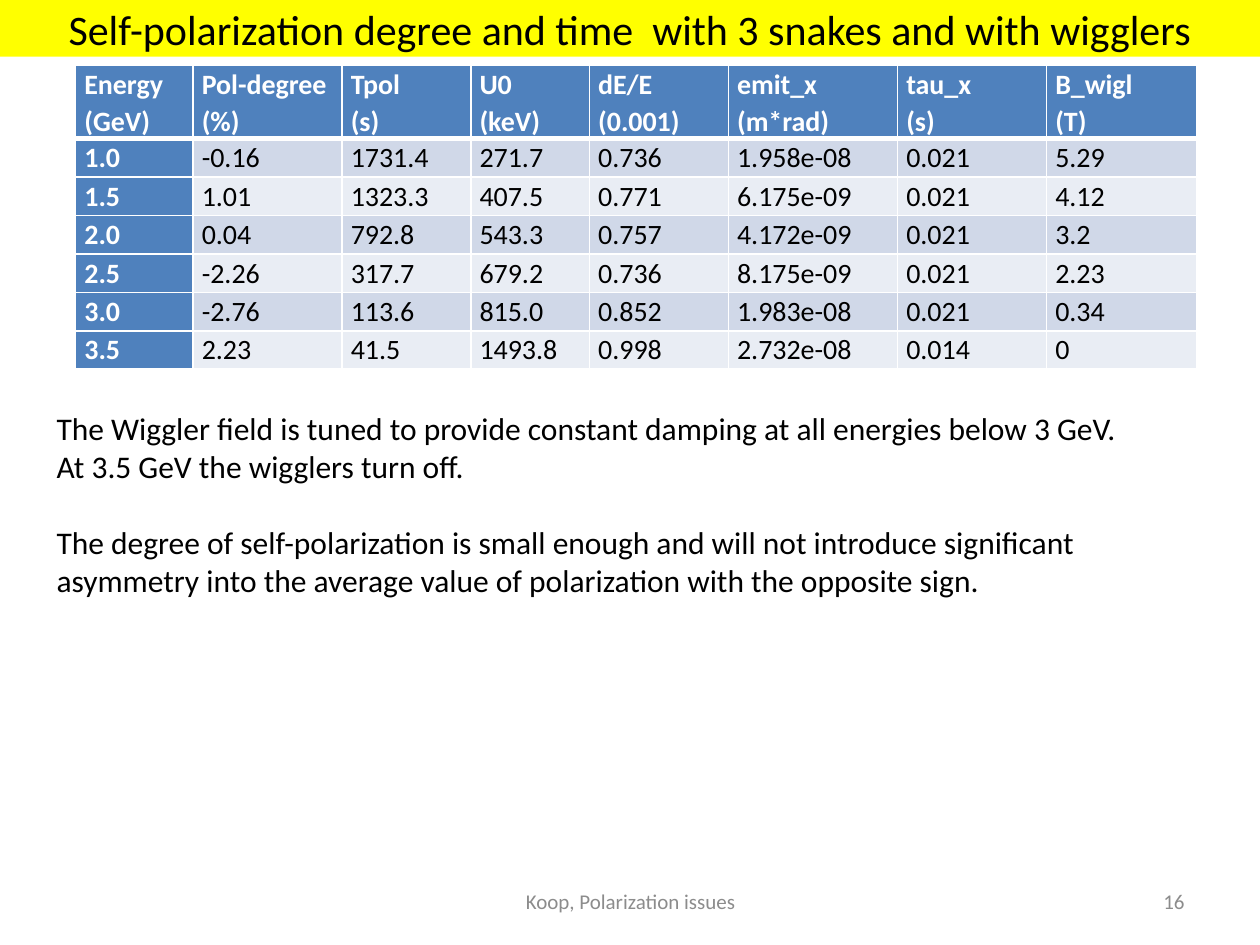
import pptx
import pptx.dml.color
import pptx.enum.text
import pptx.oxml
import pptx.oxml.ns
import pptx.util

Inches = pptx.util.Inches
Pt = pptx.util.Pt
Align = pptx.enum.text.PP_ALIGN
Anchor = pptx.enum.text.MSO_ANCHOR

FONT = "Calibri"
BLACK, WHITE, GREY, YELLOW = "000000", "FFFFFF", "8C8C8C", "FFFF00"
HEADER_BLUE, BANDS = "4F81BD", ("D0D8E8", "E9EDF4")

HEADINGS = ["Energy\n(GeV)", "Pol-degree\n(%)", "Tpol\n(s)", "U0\n(keV)",
            "dE/E\n(0.001)", "emit_x\n(m*rad)", "tau_x\n(s)", "B_wigl\n(T)"]
RESULTS = [
    ["1.0", "-0.16", "1731.4", "271.7", "0.736", "1.958e-08", "0.021", "5.29"],
    ["1.5", "1.01", "1323.3", "407.5", "0.771", "6.175e-09", "0.021", "4.12"],
    ["2.0", "0.04", "792.8", "543.3", "0.757", "4.172e-09", "0.021", "3.2"],
    ["2.5", "-2.26", "317.7", "679.2", "0.736", "8.175e-09", "0.021", "2.23"],
    ["3.0", "-2.76", "113.6", "815.0", "0.852", "1.983e-08", "0.021", "0.34"],
    ["3.5", "2.23", "41.5", "1493.8", "0.998", "2.732e-08", "0.014", "0"],
]
COLUMN_WIDTHS = [0.93, 1.18, 1.02, 0.94, 1.1, 1.34, 1.18, 1.19]
HEADER_SHARE = 0.235
REMARKS = [
    "The Wiggler field is tuned to provide constant damping at all energies "
    "below 3 GeV. At 3.5 GeV the wigglers turn off.",
    "The degree of self-polarization is small enough and will not introduce "
    "significant asymmetry into the average value of polarization with the "
    "opposite sign.",
]


def color(hex_text):
    return pptx.dml.color.RGBColor.from_string(hex_text)


def paint(target, hex_text):
    target.fill.solid()
    target.fill.fore_color.rgb = color(hex_text)


def style_text(frame, size, hex_text, align=Align.LEFT, bold=False):
    for para in frame.paragraphs:
        para.alignment = align
        para.font.name = FONT
        para.font.size = Pt(size)
        para.font.bold = bold
        para.font.color.rgb = color(hex_text)


def add_text(page, box, text, size, hex_text, align=Align.LEFT, anchor=Anchor.TOP):
    shape = page.shapes.add_textbox(*map(Inches, box))
    frame = shape.text_frame
    frame.word_wrap = True
    frame.vertical_anchor = anchor
    frame.text = text
    style_text(frame, size, hex_text, align)
    return frame


def add_border(cell, side, width):
    line = pptx.oxml.parse_xml(
        f'<a:ln{side} {pptx.oxml.ns.nsdecls("a")} w="{Pt(width)}">'
        f'<a:solidFill><a:srgbClr val="{WHITE}"/></a:solidFill></a:ln{side}>')
    cell._tc.get_or_add_tcPr().append(line)


def place_title(page, box):
    title = page.shapes.title
    title.left, title.top, title.width, title.height = map(Inches, box)
    paint(title, YELLOW)
    frame = title.text_frame
    frame.text = "Self-polarization degree and time  with 3 snakes and with wigglers"
    frame.auto_size = pptx.enum.text.MSO_AUTO_SIZE.NONE
    frame.vertical_anchor = Anchor.MIDDLE
    style_text(frame, 24, BLACK, Align.CENTER)


def fill_cell(cell, text, row, column):
    is_heading = row == 0 or column == 0
    cell.margin_left = cell.margin_right = Inches(0.07)
    cell.margin_top = cell.margin_bottom = 0
    cell.text = text
    style_text(cell.text_frame, 16, WHITE if is_heading else BLACK, bold=is_heading)
    for para in cell.text_frame.paragraphs:
        para.line_spacing = 1.07
    # A thick rule separates the headings from the results
    widths = {"L": 1, "R": 1, "T": 3 if row == 1 else 1, "B": 3 if row == 0 else 1}
    for side, width in widths.items():
        add_border(cell, side, width)
    paint(cell, HEADER_BLUE if is_heading else BANDS[(row - 1) % 2])


def place_table(page, box):
    rows = [HEADINGS] + RESULTS
    table = page.shapes.add_table(len(rows), len(HEADINGS), *map(Inches, box)).table
    for column, share in zip(table.columns, COLUMN_WIDTHS):
        column.width = Inches(box[2] * share / sum(COLUMN_WIDTHS))
    header_height = box[3] * HEADER_SHARE
    for row in table.rows:
        row.height = Inches((box[3] - header_height) / len(RESULTS))
    table.rows[0].height = Inches(header_height)
    for i, texts in enumerate(rows):
        for j, text in enumerate(texts):
            fill_cell(table.cell(i, j), text, i, j)


def place_remarks(page, box):
    frame = add_text(page, box, "\n".join(REMARKS), 18, BLACK)
    frame.paragraphs[1].space_before = Pt(22)


def place_footer(page, box):
    left, top, width, height = box
    add_text(page, (left, top, 3.17, height), "Koop, Polarization issues",
             12, GREY, Align.CENTER, Anchor.MIDDLE)
    number_width = 2.33
    add_text(page, (left + width - number_width, top, number_width, height), "16",
             12, GREY, Align.RIGHT, Anchor.MIDDLE)


def main():
    deck = pptx.Presentation()
    deck.slide_width, deck.slide_height = Inches(10), Inches(7.5)
    page = deck.slides.add_slide(deck.slide_layouts[5])
    place_title(page, (0, 0, 10, 0.45))
    place_table(page, (0.6, 0.52, 8.9, 2.39))
    place_remarks(page, (0.35, 3.2, 8.71, 1.62))
    place_footer(page, (3.42, 6.95, 6.08, 0.4))
    deck.save("out.pptx")


if __name__ == "__main__":
    main()
